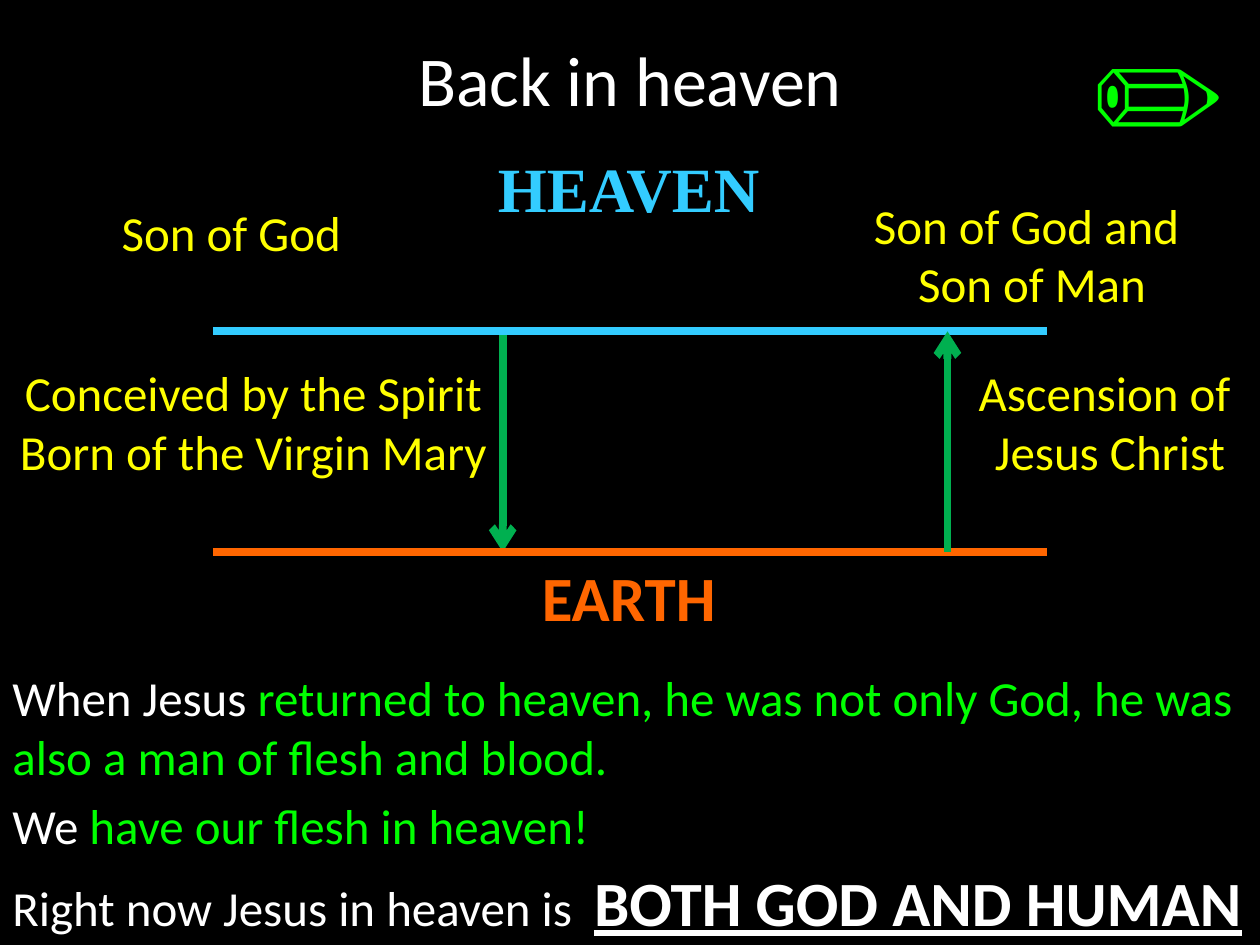
"""Builds the slide "Back in heaven" with a heaven and earth diagram."""
from dataclasses import dataclass

from lxml.etree import SubElement
from pptx import Presentation
from pptx.dml.color import RGBColor
from pptx.enum.shapes import MSO_CONNECTOR as Connector
from pptx.enum.text import MSO_ANCHOR as Anchor, MSO_AUTO_SIZE as AutoSize, PP_ALIGN as Align
from pptx.oxml.ns import qn
from pptx.util import Inches, Pt


@dataclass(frozen=True)
class Theme:
    background: str = "000000"
    white: str = "FFFFFF"
    green: str = "00FF00"
    yellow: str = "FFFF00"
    heaven: str = "33CCFF"
    earth: str = "FF6600"
    arrow: str = "00B050"
    sans: str = "Calibri"
    serif: str = "Times New Roman"
    title_size: float = 40
    heading_size: float = 36
    text_size: float = 28
    symbol_size: float = 80
    line_width: float = 4.5
    space_share: float = 0.2


THEME = Theme()

TITLE = ("Back in heaven", (0, 0, 10, 1.25))
SYMBOL = ("✏", (8.41, 0, 1.58, 1.43))
HEADINGS = [
    ("HEAVEN", (3.84, 1.14, 2.3, 0.71), THEME.heaven, THEME.serif),
    ("EARTH", (4.19, 4.38, 1.6, 0.71), THEME.earth, THEME.sans),
]
LABELS = [
    ("Son of God", (0.83, 1.56, 2.01, 0.57)),
    ("Conceived by the Spirit\nBorn of the Virgin Mary", (0, 2.83, 4.02, 1.04)),
    ("Son of God and \nSon of Man", (6.8, 1.5, 2.78, 1.04)),
    ("Ascension of \nJesus Christ", (7.63, 2.83, 2.36, 1.04)),
]
BODY_BOX = (0, 5.25, 10, 2.25)
BODY = [
    [("When Jesus ", THEME.white, False),
     ("returned to heaven, he was not only God, he was also a man of flesh and blood.",
      THEME.green, False)],
    [("We", THEME.white, False), (" have our flesh in heaven!", THEME.green, False)],
    [("Right now Jesus in heaven is  ", THEME.white, False),
     ("BOTH GOD AND HUMAN", THEME.white, True)],
]
HEAVEN_Y, EARTH_Y = 2.63, 4.38
LEFT_X, RIGHT_X = 1.69, 8.31
DESCENT_X, ASCENSION_X = 3.99, 7.52
DESCENT = ((DESCENT_X, HEAVEN_Y), (DESCENT_X, EARTH_Y), THEME.arrow, True)
LEVELS_AND_ASCENSION = [
    ((LEFT_X, HEAVEN_Y), (RIGHT_X, HEAVEN_Y), THEME.heaven, False),
    ((LEFT_X, EARTH_Y), (RIGHT_X, EARTH_Y), THEME.earth, False),
    ((ASCENSION_X, EARTH_Y), (ASCENSION_X, HEAVEN_Y), THEME.arrow, True),
]


def style_font(font, size, color, name=THEME.sans, bold=False):
    font.name, font.size, font.bold = name, Pt(size), bold
    font.color.rgb = RGBColor.from_string(color)


def add_text_box(slide, box, wrap=True, anchor=Anchor.TOP, grow=False):
    frame = slide.shapes.add_textbox(*map(Inches, box)).text_frame
    frame.word_wrap, frame.vertical_anchor = wrap, anchor
    frame.auto_size = AutoSize.SHAPE_TO_FIT_TEXT if grow else AutoSize.NONE
    return frame


def add_centred(slide, text, box, size, color, name=THEME.sans, bold=False, **layout):
    frame = add_text_box(slide, box, **layout)
    frame.text = text
    for paragraph in frame.paragraphs:
        paragraph.alignment = Align.CENTER
        style_font(paragraph.font, size, color, name, bold)


def add_line(slide, start, end, color, arrow):
    connector = slide.shapes.add_connector(Connector.STRAIGHT, *map(Inches, start + end))
    connector.line.width = Pt(THEME.line_width)
    connector.line.color.rgb = RGBColor.from_string(color)
    if arrow:
        SubElement(connector.line._get_or_add_ln(), qn("a:tailEnd"), type="arrow")
    SubElement(connector._element.spPr, qn("a:effectLst"))


def add_body(slide):
    frame = add_text_box(slide, BODY_BOX)
    for index, parts in enumerate(BODY):
        paragraph = frame.add_paragraph() if index else frame.paragraphs[0]
        paragraph.space_before = Pt(THEME.text_size * THEME.space_share)
        for text, color, strong in parts:
            run = paragraph.add_run()
            run.text = text
            size = THEME.heading_size if strong else THEME.text_size
            style_font(run.font, size, color, bold=strong)
            run.font.underline = strong


def main():
    presentation = Presentation()
    presentation.slide_width, presentation.slide_height = Inches(10), Inches(7.5)
    slide = presentation.slides.add_slide(presentation.slide_layouts[6])
    slide.background.fill.solid()
    slide.background.fill.fore_color.rgb = RGBColor.from_string(THEME.background)

    add_line(slide, *DESCENT)
    add_centred(slide, *TITLE, THEME.title_size, THEME.white, anchor=Anchor.MIDDLE)
    add_body(slide)
    for text, box, color, name in HEADINGS:
        add_centred(slide, text, box, THEME.heading_size, color, name, True,
                    wrap=False, grow=True)
    for text, box in LABELS:
        add_centred(slide, text, box, THEME.text_size, THEME.yellow, wrap=False, grow=True)
    for line in LEVELS_AND_ASCENSION:
        add_line(slide, *line)
    add_centred(slide, *SYMBOL, THEME.symbol_size, THEME.green, THEME.serif,
                anchor=Anchor.MIDDLE, grow=True)
    presentation.save("out.pptx")


if __name__ == "__main__":
    main()
